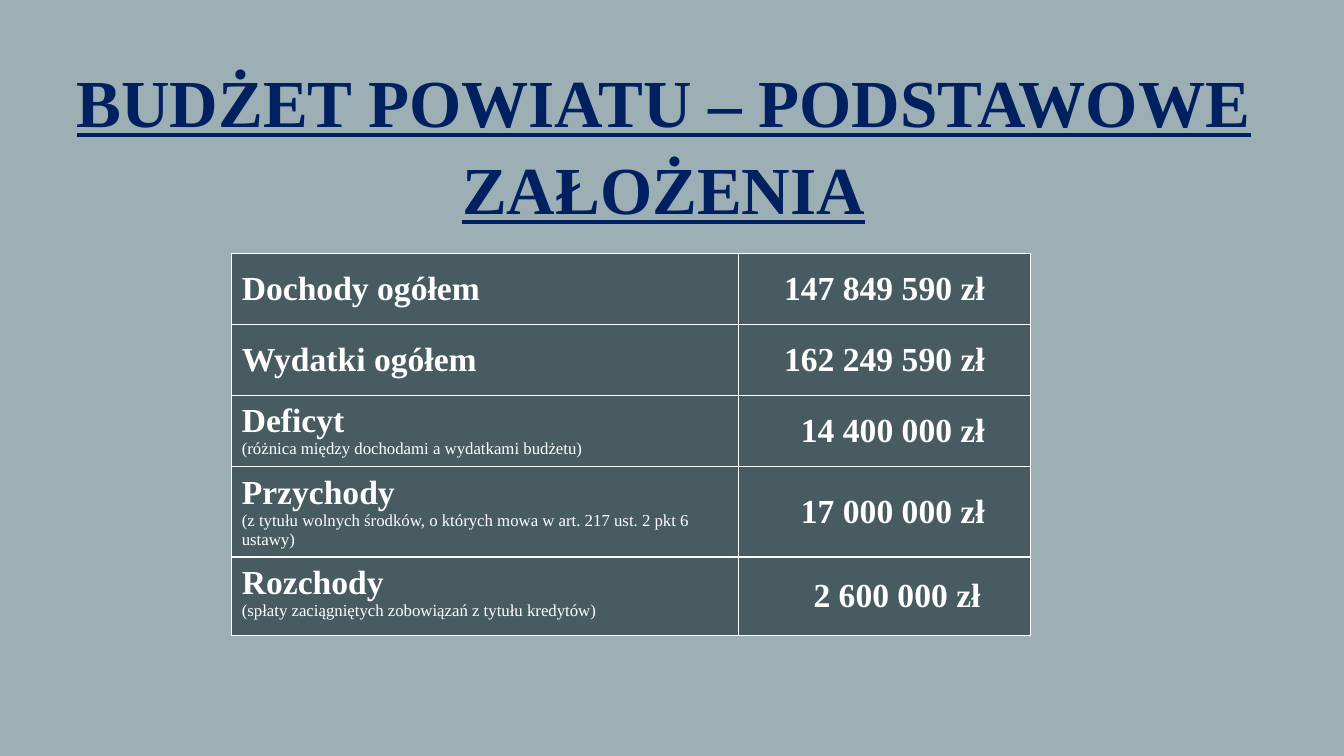
from lxml import etree
from pptx import Presentation
from pptx import util as u
from pptx.dml.color import RGBColor
from pptx.enum import text
from pptx.oxml import ns

MIST = RGBColor(0x9B, 0xAF, 0xB5)
SLATE = RGBColor(0x47, 0x5B, 0x61)
NAVY = RGBColor(0x00, 0x20, 0x60)
WHITE = RGBColor(0xFF, 0xFF, 0xFF)

# label, note, value, extra left margin of the value in points
ROWS = [
    ("Dochody ogółem", "", "147 849 590 zł", 0),
    ("Wydatki ogółem", "", "162 249 590 zł", 0),
    ("Deficyt", "(różnica między dochodami a wydatkami budżetu)",
     "14 400 000 zł", 12),
    ("Przychody",
     "(z tytułu wolnych środków, o których mowa w art. 217 ust. 2 pkt 6 ustawy)",
     "17 000 000 zł", 12),
    ("Rozchody", "(spłaty zaciągniętych zobowiązań z tytułu kredytów)",
     "2 600 000 zł", 18),
]
WIDTHS = (12.78, 7.34)
HEIGHTS = (1.79, 1.79, 1.79, 2.14, 1.85)


class Deck:
    font = "Times New Roman"

    def __init__(self):
        self.file = Presentation()
        self.file.slide_width = u.Cm(33.87)
        self.file.slide_height = u.Cm(19.05)
        self.slide = self.file.slides.add_slide(self.file.slide_layouts[6])
        fill = self.slide.background.fill
        fill.solid()
        fill.fore_color.rgb = MIST

    def run(self, para, words, size, color=WHITE, bold=True, line=False):
        run = para.add_run()
        run.text = words
        font = run.font
        font.name, font.size, font.bold = self.font, u.Pt(size), bold
        font.color.rgb = color
        if line:
            font.underline = True

    def title(self, words, left, top, width, height):
        box = self.slide.shapes.add_textbox(
            u.Cm(left), u.Cm(top), u.Cm(width), u.Cm(height))
        frame = box.text_frame
        frame.word_wrap = True
        para = frame.paragraphs[0]
        para.alignment = text.PP_ALIGN.CENTER
        para.line_spacing = 1.08
        para.space_before = u.Pt(10)
        self.run(para, words, 48, NAVY, line=True)

    def border(self, cell):
        """Draw a white one-point line on all four sides of the cell."""
        props = cell._tc.get_or_add_tcPr()
        for spot, side in enumerate(("lnL", "lnR", "lnT", "lnB")):
            line = etree.Element(ns.qn(f"a:{side}"), w=str(u.Pt(1)))
            solid = etree.SubElement(line, ns.qn("a:solidFill"))
            etree.SubElement(solid, ns.qn("a:srgbClr"), val=str(WHITE))
            props.insert(spot, line)

    def cell(self, cell):
        """Style a table cell and return its first paragraph."""
        cell.fill.solid()
        cell.fill.fore_color.rgb = SLATE
        cell.vertical_anchor = text.MSO_ANCHOR.MIDDLE
        self.border(cell)
        return cell.text_frame.paragraphs[0]

    def table(self, rows, left, top, widths, heights):
        grid = self.slide.shapes.add_table(
            len(rows), len(widths), u.Cm(left), u.Cm(top),
            u.Cm(sum(widths)), u.Cm(sum(heights))).table
        for col, width in zip(grid.columns, widths):
            col.width = u.Cm(width)
        for row, height, (label, note, value, inset) in zip(
                grid.rows, heights, rows):
            row.height = u.Cm(height)
            name, total = row.cells
            self.run(self.cell(name), label, 24)
            if note:
                self.run(name.text_frame.add_paragraph(), note, 12, bold=False)
            para = self.cell(total)
            para.alignment = text.PP_ALIGN.CENTER
            self.run(para, value, 24)
            total.margin_left = u.Cm(0.25) + u.Pt(inset)
        return grid


def main():
    deck = Deck()
    deck.title("BUDŻET POWIATU – PODSTAWOWE ZAŁOŻENIA", 0.97, 1.24, 31.52, 2.24)
    grid = deck.table(ROWS, 5.84, 6.38, WIDTHS, HEIGHTS)
    grid.cell(len(ROWS) - 1, 0).margin_bottom = u.Cm(0.33)
    deck.file.save("out.pptx")


if __name__ == "__main__":
    main()
